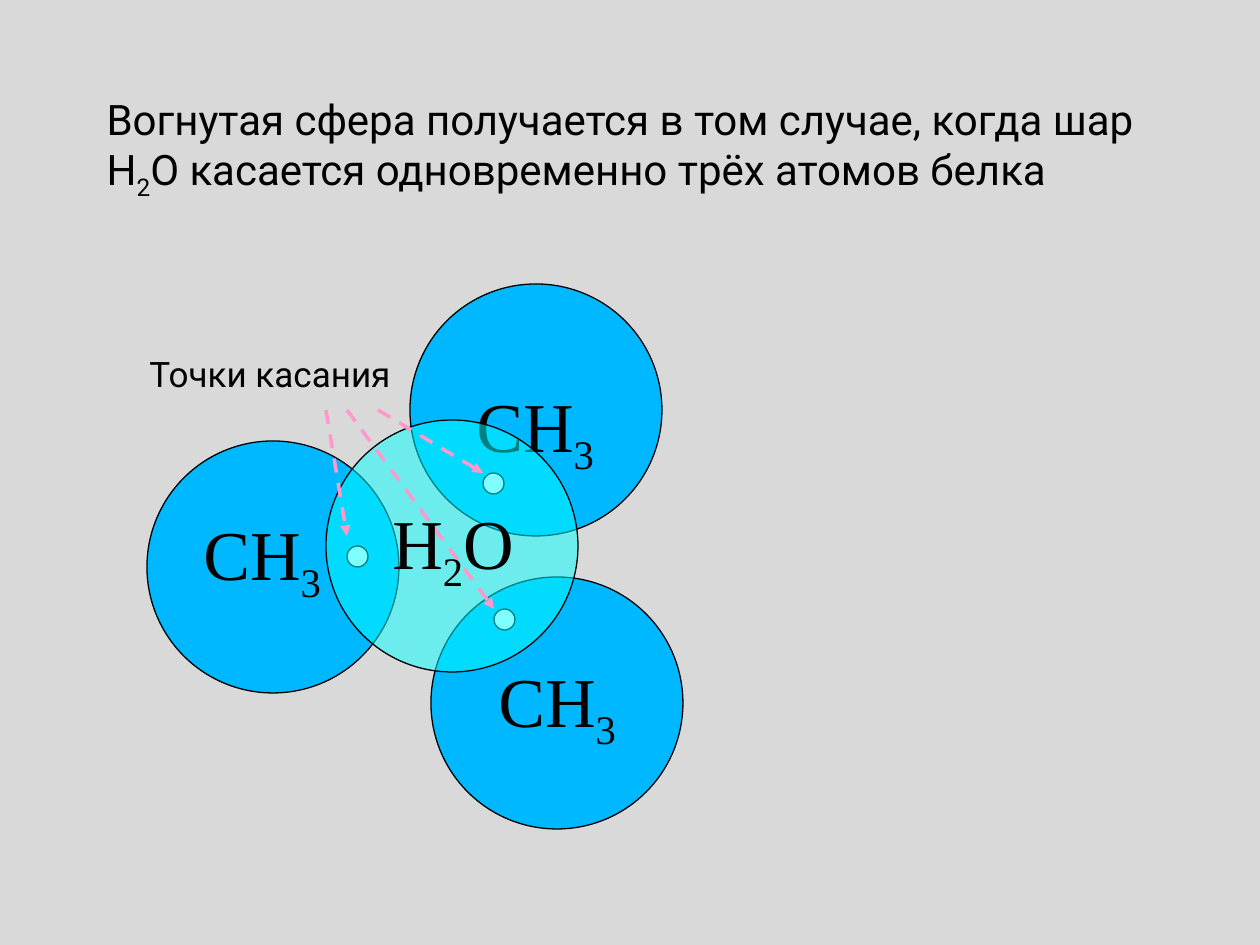
from lxml.etree import SubElement
from pptx import Presentation
from pptx.dml.color import RGBColor
from pptx.enum.dml import MSO_LINE
from pptx.enum.shapes import MSO_CONNECTOR, MSO_SHAPE
from pptx.enum.text import MSO_ANCHOR, MSO_AUTO_SIZE, PP_ALIGN
from pptx.oxml.ns import qn
from pptx.util import Pt

EMU_PER_PX = 914400 / 126
COLOURS = {
    "background": "D9D9D9",
    "text": "000000",
    "atom": "00B8FF",
    "water": "00FFFF",
    "contact": "FFFFFF",
    "arrow": "FF99CC",
}
SANS, SERIF = "Roboto", "Times New Roman"
ATOM_SIZE, CONTACT_SIZE = 252, 21


def px(*lengths):
    return [round(length * EMU_PER_PX) for length in lengths]


def colour(name):
    return RGBColor.from_string(COLOURS[name])


def write_formula(paragraph, parts, font_name, size):
    """Write text parts in turn, every second one as a subscript."""
    for index, part in enumerate(parts):
        run = paragraph.add_run()
        run.text = part
        run.font.name = font_name
        run.font.size = Pt(size)
        run.font.color.rgb = colour("text")
        if index % 2:
            run.font._element.set("baseline", "-25000")


def add_title(slide, parts):
    title = slide.shapes.title
    title.left, title.top, title.width, title.height = px(94, 32, 1071, 231)
    frame = title.text_frame
    frame.word_wrap = True
    frame.auto_size = MSO_AUTO_SIZE.NONE
    frame.vertical_anchor = MSO_ANCHOR.MIDDLE
    paragraph = frame.paragraphs[0]
    paragraph.alignment = PP_ALIGN.LEFT
    paragraph.line_spacing = 0.9
    write_formula(paragraph, parts, SANS, 24)


def add_label(slide, box, parts, font_name=SERIF, size=40):
    label = slide.shapes.add_textbox(*px(*box))
    label.text_frame.word_wrap = True
    write_formula(label.text_frame.paragraphs[0], parts, font_name, size)


def add_circle(slide, left, top, size, fill, alpha=None):
    circle = slide.shapes.add_shape(MSO_SHAPE.OVAL, *px(left, top, size, size))
    circle.shadow.inherit = False
    circle.fill.solid()
    circle.fill.fore_color.rgb = colour(fill)
    circle.line.color.rgb = colour("text")
    circle.line.width = Pt(0.75)
    if alpha is not None:
        fill_colour = circle._element.spPr.find(qn("a:solidFill"))[0]
        SubElement(fill_colour, qn("a:alpha"), val=str(alpha * 1000))


def add_arrow(slide, start, end):
    arrow = slide.shapes.add_connector(MSO_CONNECTOR.STRAIGHT, *px(*start, *end))
    arrow.line.color.rgb = colour("arrow")
    arrow.line.width = Pt(2)
    arrow.line.dash_style = MSO_LINE.DASH
    SubElement(arrow.line._get_or_add_ln(), qn("a:tailEnd"), type="triangle")
    SubElement(arrow._element.spPr, qn("a:effectLst"))


def main():
    presentation = Presentation()
    presentation.slide_width, presentation.slide_height = px(1260, 945)
    slide = presentation.slides.add_slide(presentation.slide_layouts[5])
    slide.background.fill.solid()
    slide.background.fill.fore_color.rgb = colour("background")

    add_title(slide, ["Вогнутая сфера получается в том случае, когда шар H", "2",
                      "O касается одновременно трёх атомов белка"])

    # Protein atoms with their labels
    for left, top in [(147, 441), (431, 577), (410, 284)]:
        add_circle(slide, left, top, ATOM_SIZE, "atom")
    for left, top in [(191, 504), (464, 376), (486, 651)]:
        add_label(slide, (left, top, 144, 108), ["CH", "3"])

    # Points of contact under the translucent water sphere
    for left, top in [(494, 609), (347, 546), (483, 473)]:
        add_circle(slide, left, top, CONTACT_SIZE, "contact")
    add_circle(slide, 326, 420, ATOM_SIZE, "water", alpha=50)

    # Caption with arrows to the points
    add_label(slide, (137, 346, 287, 63), ["Точки касания"], SANS, 20)
    for start_x, end in [(378, (483, 473)), (347, (494, 609)), (326, (347, 536))]:
        add_arrow(slide, (start_x, 410), end)

    # Water label, wide enough to stay on one line
    add_label(slide, (380, 493, 154, 108), ["H", "2", "O"])

    presentation.save("out.pptx")


if __name__ == "__main__":
    main()
